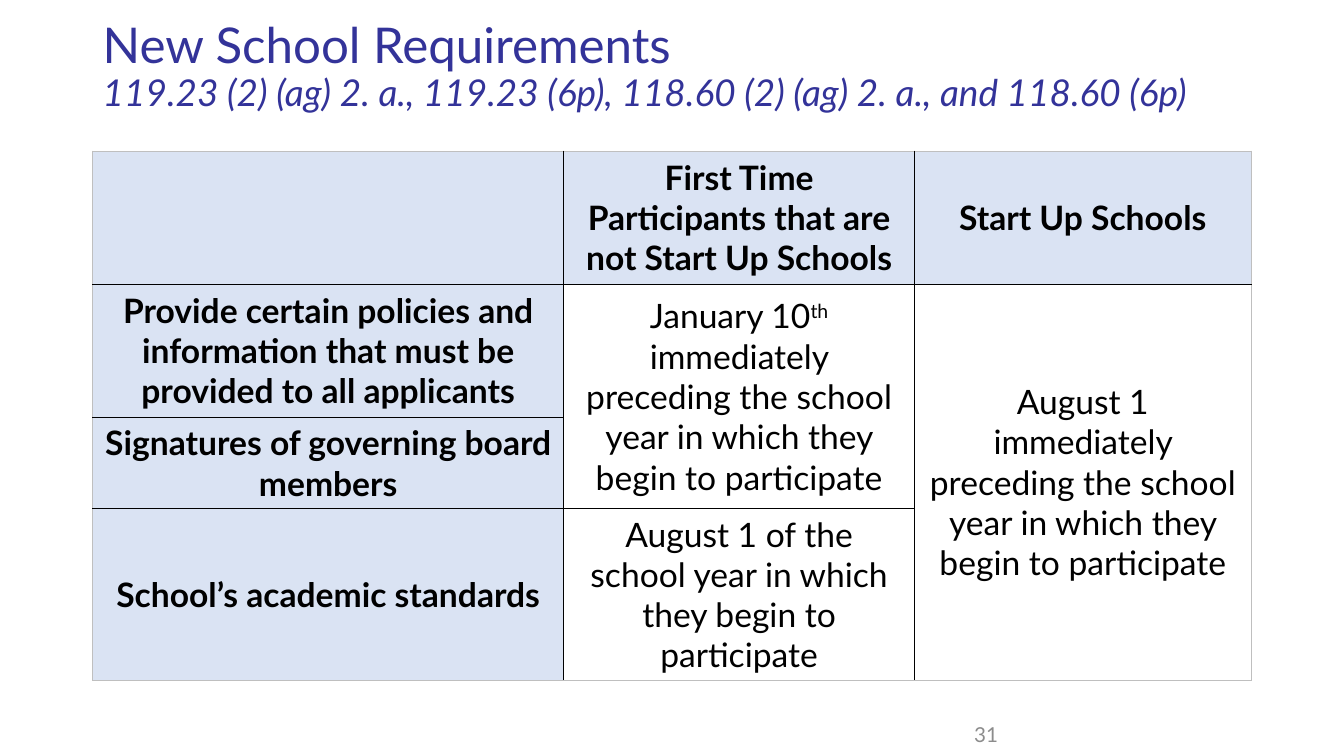
from dataclasses import dataclass

import lxml.etree
import pptx
import pptx.dml.color
import pptx.enum.text
import pptx.oxml.ns
import pptx.util

Pt = pptx.util.Pt
Align = pptx.enum.text.PP_ALIGN
Anchor = pptx.enum.text.MSO_ANCHOR

FONT = "Lato"
COLORS = {
    "title": "333399",
    "text": "000000",
    "number": "8C8C8C",
    "heading": "DAE3F3",
    "grid": "000000",
    "frame": "BFBFBF",
}
COLUMN_WIDTHS = (336.5, 250.5, 240.5)
ROW_HEIGHTS = (95, 95, 65.5, 122.4)


@dataclass(frozen=True)
class Entry:
    row: int
    column: int
    runs: tuple[str, ...] = ()
    row_span: int = 1

    @property
    def is_heading(self) -> bool:
        return self.row == 0 or self.column == 0


ENTRIES = (
    Entry(0, 0),
    Entry(0, 1, ("First Time Participants that are not Start Up Schools",)),
    Entry(0, 2, ("Start Up Schools",)),
    Entry(1, 0, ("Provide certain policies and information that must be provided to all applicants",)),
    Entry(1, 1, ("January 10", "th",
                 " immediately preceding the school year in which they begin to participate"), 2),
    Entry(1, 2, ("August 1 immediately preceding the school year in which they begin to participate",), 3),
    Entry(2, 0, ("Signatures of governing board members",)),
    Entry(3, 0, ("School’s academic standards",)),
    Entry(3, 1, ("August 1 of the school year in which they begin to participate",)),
)


def color(name: str) -> pptx.dml.color.RGBColor:
    return pptx.dml.color.RGBColor.from_string(COLORS[name])


def set_font(font, size: float, color_name: str) -> None:
    font.name = FONT
    font.size = Pt(size)
    font.color.rgb = color(color_name)


def place(shape, left: float, top: float, width: float, height: float) -> None:
    shape.left, shape.top, shape.width, shape.height = map(Pt, (left, top, width, height))


def add_borders(cell, row: int, column: int, row_span: int) -> None:
    """Draw black lines inside the table and grey lines on its outer edge."""
    on_frame = {
        "lnL": column == 0,
        "lnR": column == len(COLUMN_WIDTHS) - 1,
        "lnT": row == 0,
        "lnB": row + row_span == len(ROW_HEIGHTS),
    }
    properties = cell._tc.get_or_add_tcPr()
    qn = pptx.oxml.ns.qn
    for side, outer in on_frame.items():
        if cell.is_spanned and side in ("lnT", "lnB"):
            continue
        line = lxml.etree.SubElement(properties, qn(f"a:{side}"), w=str(Pt(1)))
        fill = lxml.etree.SubElement(line, qn("a:solidFill"))
        lxml.etree.SubElement(fill, qn("a:srgbClr"), val=COLORS["frame" if outer else "grid"])


def fill_cell(table, entry: Entry) -> None:
    cell = table.cell(entry.row, entry.column)
    last_row = entry.row + entry.row_span - 1
    if entry.row_span > 1:
        cell.merge(table.cell(last_row, entry.column))
    add_borders(cell, entry.row, entry.column, entry.row_span)
    for row in range(entry.row + 1, last_row + 1):
        spanned = table.cell(row, entry.column)
        add_borders(spanned, row, entry.column, 1)
        spanned.fill.background()
    if entry.is_heading:
        cell.fill.solid()
        cell.fill.fore_color.rgb = color("heading")
    else:
        cell.fill.background()
    cell.vertical_anchor = Anchor.MIDDLE
    para = cell.text_frame.paragraphs[0]
    para.alignment = Align.CENTER
    set_font(para.font, 24, "text")
    para.font.bold = entry.is_heading
    for text in entry.runs:
        span = para.add_run()
        span.text = text
        if text == "th":
            span.font._element.set("baseline", "30000")


def add_title(page) -> None:
    title = page.shapes.title
    place(title, 66.2, 8.6, 828, 79.2)
    title.text_frame.word_wrap = True
    title.text_frame.auto_size = pptx.enum.text.MSO_AUTO_SIZE.NONE
    title.text_frame.vertical_anchor = Anchor.MIDDLE
    para = title.text_frame.paragraphs[0]
    para.alignment = Align.LEFT
    para.line_spacing = 0.9
    heading = para.add_run()
    heading.text = "New School Requirements"
    set_font(heading.font, 35.2, "title")
    para.add_line_break()
    statutes = para.add_run()
    statutes.text = "119.23 (2) (ag) 2. a., 119.23 (6p), 118.60 (2) (ag) 2. a., and 118.60 (6p)"
    set_font(statutes.font, 26.4, "title")
    statutes.font.italic = True


def add_requirements_table(page) -> None:
    frame = page.shapes.add_table(
        len(ROW_HEIGHTS), len(COLUMN_WIDTHS),
        Pt(66.2), Pt(108), Pt(sum(COLUMN_WIDTHS)), Pt(sum(ROW_HEIGHTS)))
    table = frame.table
    table.first_row = table.horz_banding = False
    for column, width in zip(table.columns, COLUMN_WIDTHS):
        column.width = Pt(width)
    for row, height in zip(table.rows, ROW_HEIGHTS):
        row.height = Pt(height)
    for entry in ENTRIES:
        fill_cell(table, entry)


def add_page_number(page) -> None:
    box = page.shapes.add_textbox(Pt(504), Pt(509.8), Pt(216), Pt(28.8))
    box.text_frame.word_wrap = True
    box.text_frame.vertical_anchor = Anchor.MIDDLE
    para = box.text_frame.paragraphs[0]
    para.text = "31"
    para.alignment = Align.RIGHT
    set_font(para.font, 14.7, "number")


def main() -> None:
    deck = pptx.Presentation()
    deck.slide_width, deck.slide_height = Pt(960), Pt(540)
    page = deck.slides.add_slide(deck.slide_layouts.get_by_name("Title Only"))
    add_title(page)
    add_requirements_table(page)
    add_page_number(page)
    deck.save("out.pptx")


if __name__ == "__main__":
    main()
